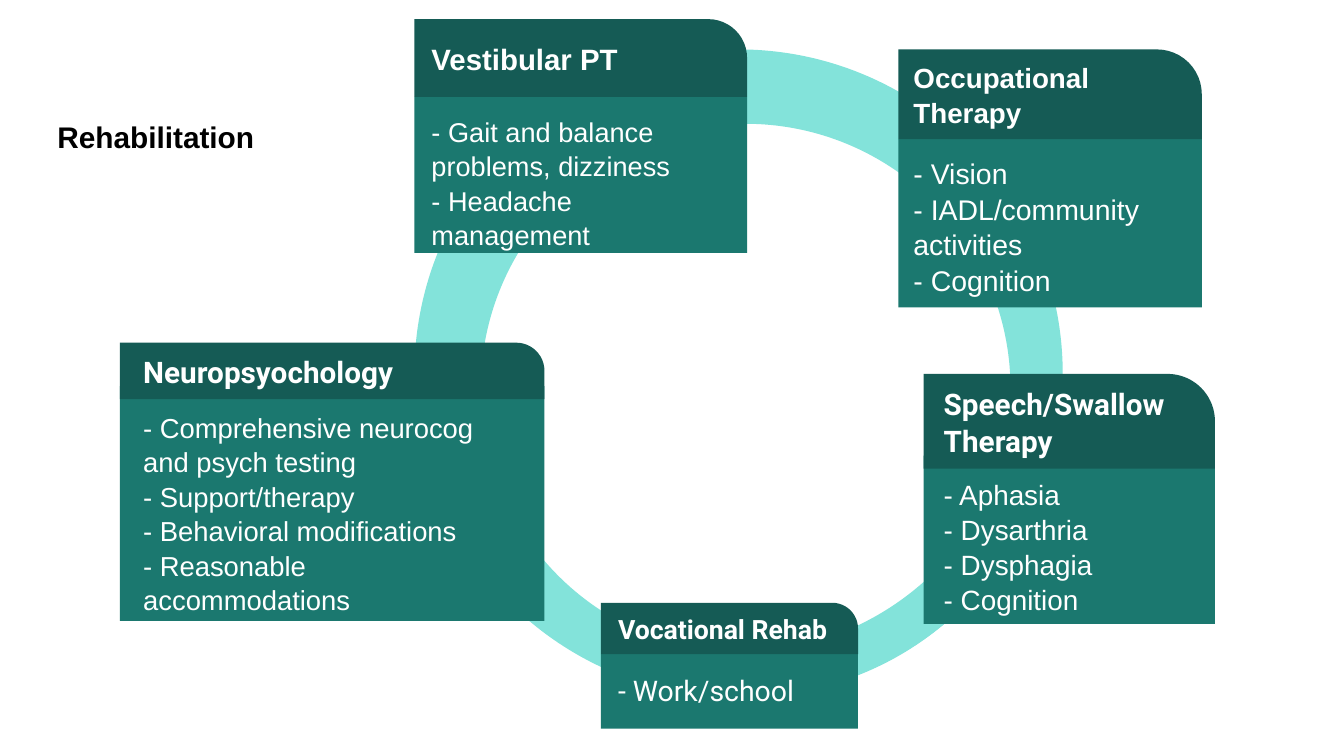
from pptx import Presentation
from pptx.dml.color import RGBColor
from pptx.enum.shapes import MSO_SHAPE as SHAPE
from pptx.enum.text import MSO_ANCHOR as ANCHOR, MSO_AUTO_SIZE as AUTO, PP_ALIGN as ALIGN
from pptx.util import Inches, Pt


def rgb(value):
    return RGBColor.from_string(value)


class Deck:
    """Holds the style and the current slide."""
    BLACK, WHITE = "000000", "FFFFFF"
    RING, HEAD, BODY = "83E3DA", "155B55", "1B786F"
    LINE_SPACING = 1.05

    def __init__(self):
        self.prs = Presentation()
        self.prs.slide_width, self.prs.slide_height = Inches(13.33), Inches(7.5)
        self.s = self.prs.slides.add_slide(self.prs.slide_layouts[5])

    def set_text(self, sp, lines, font, size, color, pad, bold=False, anchor=ANCHOR.MIDDLE):
        """Fill a shape with left-aligned lines; pad is (horizontal, vertical)."""
        tf = sp.text_frame
        tf.text = "\n".join(lines)
        tf.word_wrap, tf.auto_size, tf.vertical_anchor = True, AUTO.NONE, anchor
        tf.margin_left, tf.margin_right = Inches(pad[0]), Inches(pad[0] + 0.02)
        tf.margin_top = tf.margin_bottom = Inches(pad[1])
        for p in tf.paragraphs:
            p.alignment, p.line_spacing = ALIGN.LEFT, self.LINE_SPACING
            p.space_before = Pt(0)
            for r in p.runs:
                r.font.name, r.font.size, r.font.bold = font, Pt(size), bold
                r.font.color.rgb = rgb(color)

    def title(self, text, x, y, w, h, size):
        sp = self.s.shapes.title
        sp.left, sp.top, sp.width, sp.height = map(Inches, (x, y, w, h))
        self.set_text(sp, [text], "Arial", size, self.BLACK, (0.13, 0.07), bold=True)

    def shape(self, kind, x, y, w, h, color):
        sp = self.s.shapes.add_shape(kind, *map(Inches, (x, y, w, h)))
        sp.shadow.inherit = False
        sp.fill.solid()
        sp.fill.fore_color.rgb = rgb(color)
        sp.line.fill.background()
        return sp

    def ring(self, x, y, size):
        sp = self.shape(SHAPE.BLOCK_ARC, x, y, size, size, self.RING)
        sp.rotation = 180
        for i, value in enumerate((54, 30.13, 0.07)):
            sp.adjustments[i] = value

    def card(self, x, w, body_box, head_box, pad, head, body):
        """Draw a list under a heading; boxes are (top, height), texts (lines, font, size)."""
        sp = self.shape(SHAPE.RECTANGLE, x, body_box[0], w, body_box[1], self.BODY)
        self.set_text(sp, *body, self.WHITE, (pad, pad), anchor=ANCHOR.TOP)
        sp = self.shape(SHAPE.ROUND_1_RECTANGLE, x, head_box[0], w, head_box[1], self.HEAD)
        sp.adjustments[0] = 0.5
        self.set_text(sp, *head, self.WHITE, (pad, pad), bold=True)


CARDS = [
    (4.11, 3.3, (0.96, 1.55), (0.19, 0.77), 0.17,
     (["Vestibular PT"], "Arial", 21),
     (["- Gait and balance problems, dizziness", "- Headache management"], "Arial", 19.4)),
    (8.91, 3.01, (1.38, 1.67), (0.49, 0.89), 0.15,
     (["Occupational Therapy"], "Arial", 19.8),
     (["- Vision", "- IADL/community activities", "- Cognition"], "Arial", 20.3)),
    (5.96, 2.55, (6.49, 0.74), (5.98, 0.51), 0.17,
     (["Vocational Rehab"], "Roboto", 19),
     (["- Work/school"], "Roboto", 20.3)),
    (9.16, 2.89, (4.52, 1.67), (3.71, 0.94), 0.2,
     (["Speech/Swallow Therapy"], "Roboto", 21.2),
     (["- Aphasia", "- Dysarthria", "- Dysphagia", "- Cognition"], "Arial", 19.9)),
    (1.19, 4.21, (3.83, 2.33), (3.4, 0.56), 0.23,
     (["Neuropsyochology"], "Roboto", 21.2),
     (["- Comprehensive neurocog and psych testing", "- Support/therapy",
       "- Behavioral modifications", "- Reasonable accommodations"], "Arial", 19.6)),
]


def main():
    deck = Deck()
    deck.title("Rehabilitation", 0.44, 0.72, 9.22, 1.25, 21.3)
    deck.ring(4.11, 0.49, 6.43)
    deck.ring(4.34, 0.8, 6.11)
    for card in CARDS:
        deck.card(*card)
    deck.prs.save("out.pptx")


if __name__ == "__main__":
    main()
